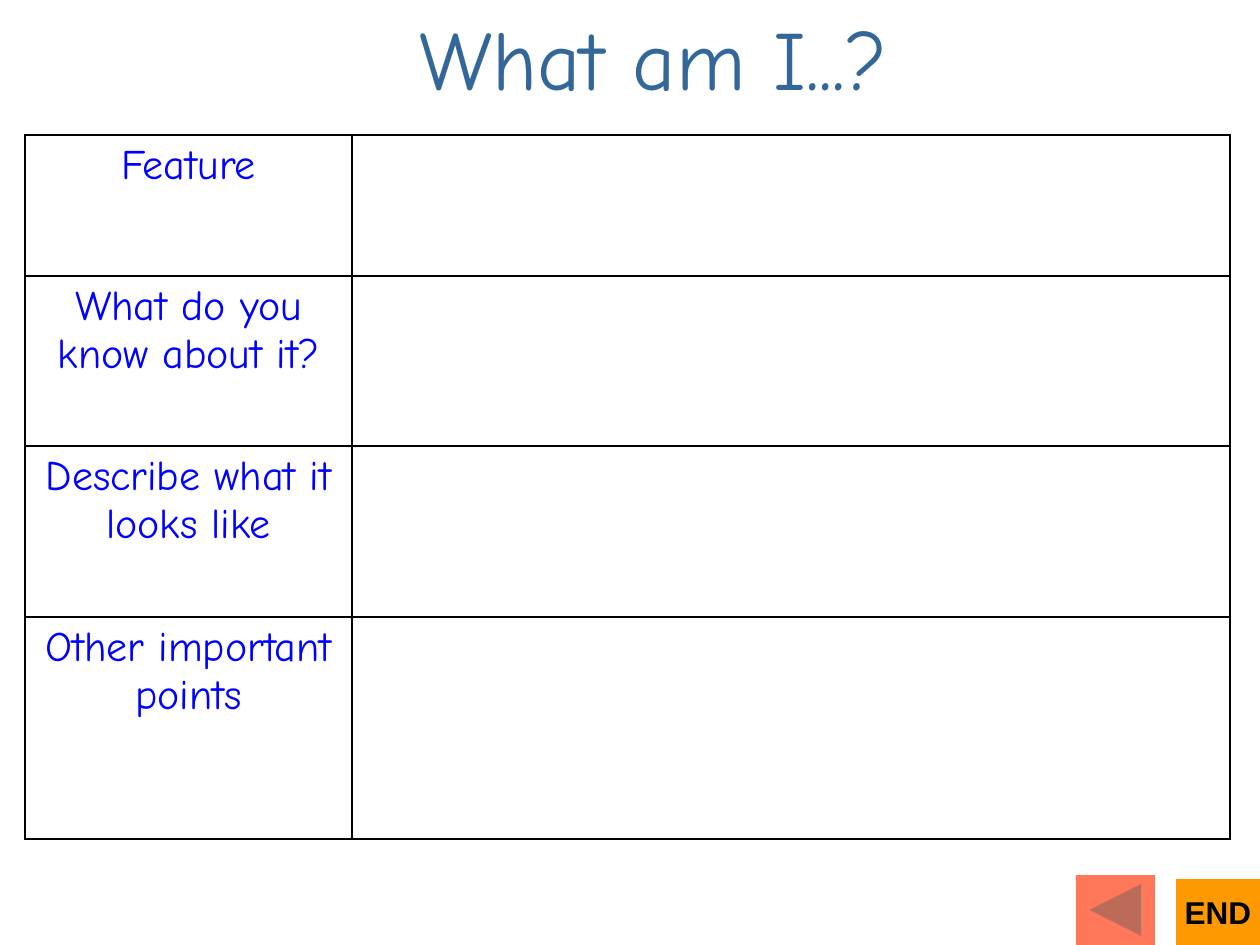
from lxml import etree
from pptx import Presentation
from pptx.dml.color import RGBColor
from pptx.enum.shapes import MSO_SHAPE
from pptx.enum.text import MSO_ANCHOR, PP_ALIGN
from pptx.oxml.ns import qn
from pptx.util import Pt

TITLE = "What am I...?"
PROMPTS = [
    ("Feature", 141),
    ("What do you know about it?", 170),
    ("Describe what it looks like", 171),
    ("Other important points", 222),
]
COLUMN_WIDTHS = (327, 878)
TABLE_LEFT, TABLE_TOP = 25, 135
TITLE_BOX = (302, 0, 703, 103)
BACK_BOX = (1076, 875, 79, 70)
END_BOX = (1176, 879, 84, 66)

TITLE_BLUE = RGBColor(0x33, 0x66, 0x99)
PROMPT_BLUE = RGBColor(0x00, 0x00, 0xFF)
BUTTON_RED = RGBColor(0xFF, 0x31, 0x01)
BUTTON_ORANGE = RGBColor(0xFF, 0x99, 0x00)
BLACK = RGBColor(0x00, 0x00, 0x00)
HAND_FONT = "Comic Neue"


def px(length):
    return round(length * 914400 / 126)


def write(text_frame, text, font_name, size, color, bold=False):
    text_frame.text = text
    paragraph = text_frame.paragraphs[0]
    paragraph.alignment = PP_ALIGN.CENTER
    font = paragraph.runs[0].font
    font.name, font.size, font.bold = font_name, Pt(size), bold
    font.color.rgb = color


def add_borders(cell):
    properties = cell._tc.get_or_add_tcPr()
    for position, side in enumerate(("lnL", "lnR", "lnT", "lnB")):
        line = etree.Element(qn(f"a:{side}"), w=str(Pt(1)))
        fill = etree.SubElement(line, qn("a:solidFill"))
        etree.SubElement(fill, qn("a:srgbClr"), val=str(BLACK))
        properties.insert(position, line)


def add_title(slide):
    title = slide.shapes.title
    title.left, title.top, title.width, title.height = map(px, TITLE_BOX)
    title.text_frame.word_wrap = False
    title.text_frame.vertical_anchor = MSO_ANCHOR.TOP
    write(title.text_frame, TITLE, HAND_FONT, 48, TITLE_BLUE)


def add_prompt_table(slide):
    heights = [height for _, height in PROMPTS]
    table = slide.shapes.add_table(
        len(PROMPTS), len(COLUMN_WIDTHS), px(TABLE_LEFT), px(TABLE_TOP),
        px(sum(COLUMN_WIDTHS)), px(sum(heights))).table
    table.first_row = table.horz_banding = False
    for column, width in zip(table.columns, COLUMN_WIDTHS):
        column.width = px(width)
    for row, (prompt, height) in zip(table.rows, PROMPTS):
        row.height = px(height)
        for cell in row.cells:
            cell.fill.background()
            add_borders(cell)
        write(row.cells[0].text_frame, prompt, HAND_FONT, 24, PROMPT_BLUE)


def add_button(slide, kind, box, color):
    button = slide.shapes.add_shape(kind, *map(px, box))
    button.shadow.inherit = False
    button.fill.solid()
    button.fill.fore_color.rgb = color
    button.line.fill.background()
    return button


def add_buttons(slide):
    back = add_button(slide, MSO_SHAPE.ACTION_BUTTON_FORWARD_OR_NEXT, BACK_BOX, BUTTON_RED)
    properties = back._element.spPr
    properties.find(qn("a:xfrm")).set("flipH", "1")
    color = properties.find(qn("a:solidFill")).find(qn("a:srgbClr"))
    etree.SubElement(color, qn("a:alpha"), val="65000")

    end = add_button(slide, MSO_SHAPE.ACTION_BUTTON_CUSTOM, END_BOX, BUTTON_ORANGE)
    end.text_frame.word_wrap = False
    end.text_frame.vertical_anchor = MSO_ANCHOR.MIDDLE
    write(end.text_frame, "END", "Arial", 18, BLACK, bold=True)


def main():
    presentation = Presentation()
    presentation.slide_width, presentation.slide_height = px(1260), px(945)
    slide = presentation.slides.add_slide(presentation.slide_layouts[5])
    add_title(slide)
    add_prompt_table(slide)
    add_buttons(slide)
    presentation.save("out.pptx")


if __name__ == "__main__":
    main()
